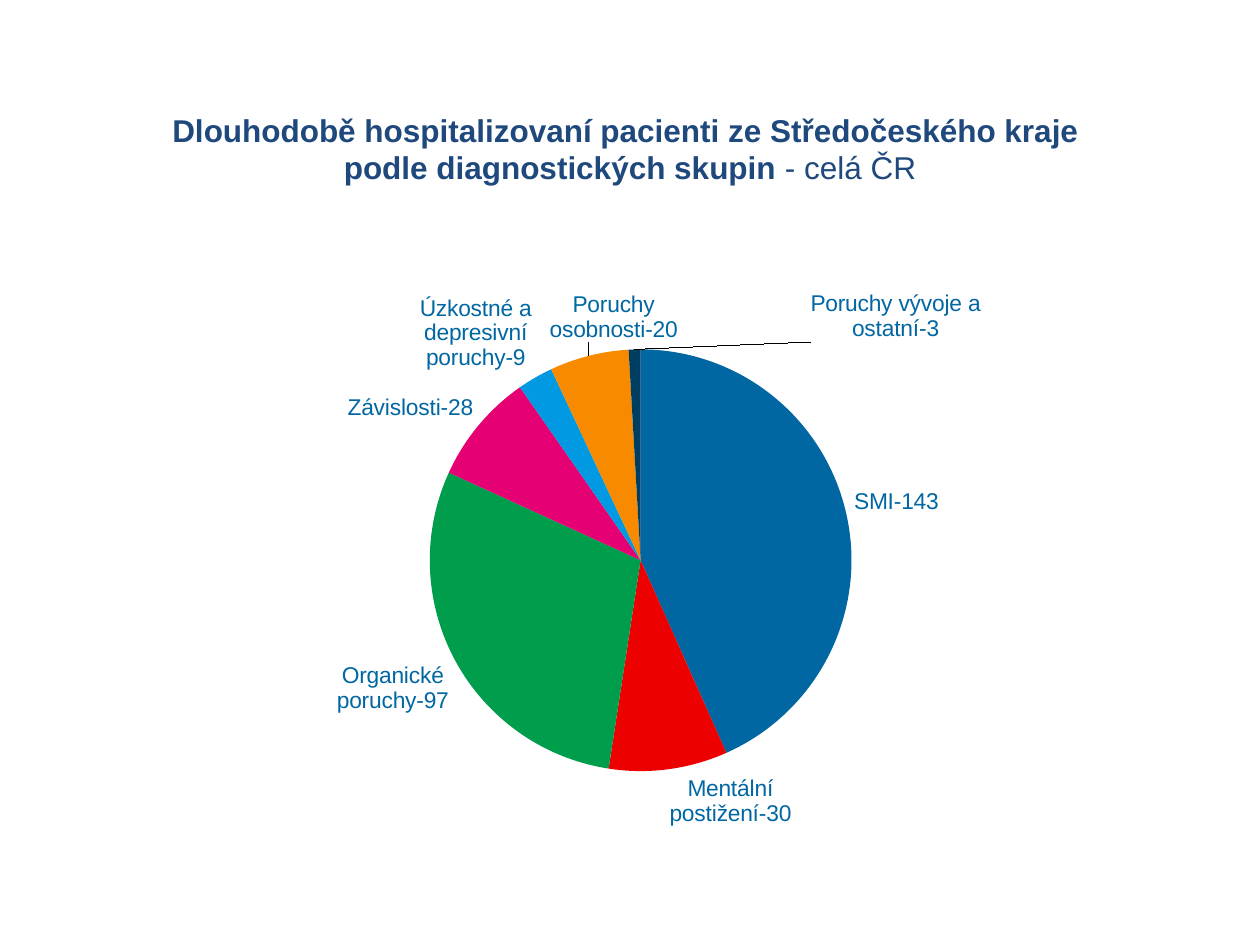
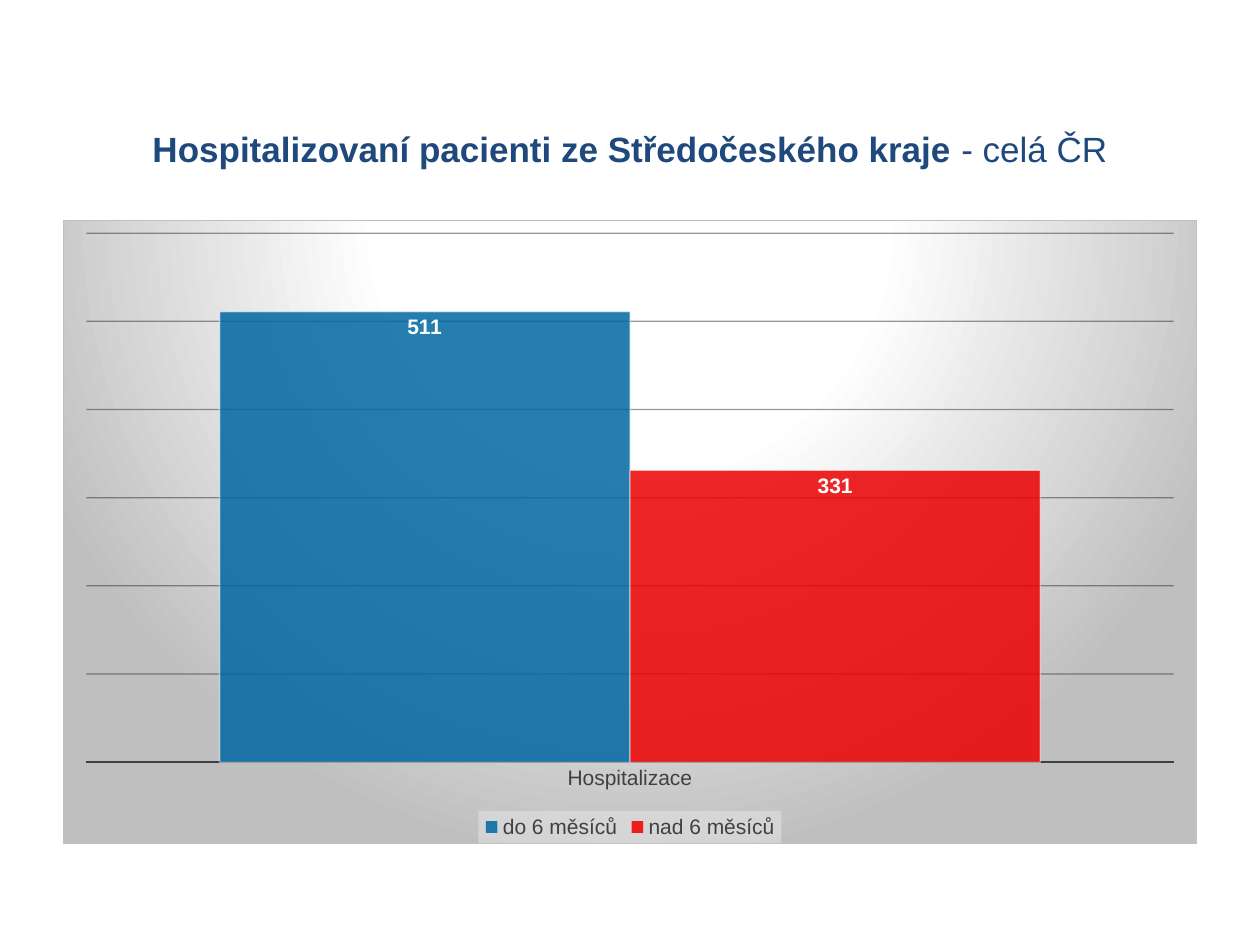
from copy import deepcopy

from pptx import Presentation
from pptx import oxml
from pptx import util as u
from pptx.chart.data import CategoryChartData
from pptx.dml.color import RGBColor
from pptx.enum import chart as kinds
from pptx.enum import text
from pptx.oxml import ns

WIDTH, HEIGHT = 10, 7.5
FONT = "Arial"
NAVY, BLUE, RED, WHITE = "1F497D", "0067A2", "EC0000", "FFFFFF"
GREY, DARK, BLACK = "BFBFBF", "404040", "000000"
TITLE_BOX = (0.05, 0.097, 0.9, 0.12)
PIE_BOX = (0.102, 0.283, 0.797, 0.62)
COLUMN_BOX = (0.05, 0.233, 0.9, 0.66)
DIAGNOSES = {
    "SMI": (143, BLUE),
    "Mentální postižení": (30, RED),
    "Organické poruchy": (97, "009D4D"),
    "Závislosti": (28, "E50073"),
    "Úzkostné a depresivní poruchy": (9, "0099E2"),
    "Poruchy osobnosti": (20, "F88A00"),
    "Poruchy vývoje a ostatní": (3, "003E61"),
}
LABEL_SHIFTS = {5: (0.09, -0.01), 6: (0.26, 0)}
STAYS = {"do 6 měsíců": (511, BLUE), "nad 6 měsíců": (331, RED)}


def colour(value):
    """Turn a hex string into a colour."""
    return RGBColor.from_string(value)


def place(box):
    """Turn shares of the slide into lengths."""
    return [u.Inches(share * side) for share, side in zip(box, (WIDTH, HEIGHT) * 2)]


def style_font(font, size, shade, bold=False):
    """Apply the shared typeface with a size and colour."""
    for name, value in {"name": FONT, "size": u.Pt(size), "bold": bold}.items():
        setattr(font, name, value)
    font.color.rgb = colour(shade)


def xml(tag, body):
    """Build a chart element from its tag and inner markup."""
    return oxml.parse_xml(f"<c:{tag} {ns.nsdecls('c', 'a')}>{body}</c:{tag}>")


def tint(value, alpha=100):
    """Give the markup of a colour with its opacity in percent."""
    return f'<a:srgbClr val="{value}"><a:alpha val="{alpha * 1000}"/></a:srgbClr>'


def gradient(stops, direction):
    """Give the markup of a gradient fill."""
    marks = "".join(f'<a:gs pos="{at * 1000}">{shade}</a:gs>' for at, shade in stops)
    return f"<a:gradFill><a:gsLst>{marks}</a:gsLst>{direction}</a:gradFill>"


def solid(value, alpha=100):
    """Give the markup of a plain fill."""
    return f"<a:solidFill>{tint(value, alpha)}</a:solidFill>"


def outline(fill):
    """Give the markup of a thin line."""
    return f'<a:ln w="9525">{fill}</a:ln>'


def manual_layout(**shares):
    """Build a manual layout from shares of the chart."""
    marks = "".join(f'<c:{name} val="{value}"/>' for name, value in shares.items())
    return xml("layout", f"<c:manualLayout>{marks}</c:manualLayout>")


def add_title(deck, strong, light, size):
    """Add a title-only page with a bold title and a light ending."""
    page = deck.slides.add_slide(deck.slide_layouts[5])
    title = page.shapes.title
    title.left, title.top, title.width, title.height = place(TITLE_BOX)
    frame = title.text_frame
    settings = {"word_wrap": True, "auto_size": text.MSO_AUTO_SIZE.NONE,
                "vertical_anchor": text.MSO_ANCHOR.MIDDLE}
    for name, value in settings.items():
        setattr(frame, name, value)
    para = frame.paragraphs[0]
    para.alignment = text.PP_ALIGN.CENTER
    para.text = strong
    for span in para.runs:
        style_font(span.font, size, NAVY, True)
    ending = para.add_run()
    ending.text = light
    style_font(ending.font, size, NAVY)
    return page


def add_chart(page, kind, box, categories, series):
    """Add a chart with the shared base font."""
    data = CategoryChartData()
    data.categories = categories
    for name, values in series.items():
        data.add_series(name, values)
    chart = page.shapes.add_chart(kind, *place(box), data).chart
    chart.has_title = False
    style_font(chart.font, 10, BLACK)
    return chart


def shift_label(labels, index, across, down):
    """Move one label away from its usual place."""
    label = xml("dLbl", f'<c:idx val="{index}"/>')
    label.append(manual_layout(x=across, y=down))
    skipped = {ns.qn("c:dLbl"), ns.qn("c:showLeaderLines")}
    label.extend(deepcopy(part) for part in labels if part.tag not in skipped)
    return label


def add_diagnosis_pie(page, box):
    """Draw the pie of diagnostic groups with outside labels."""
    values = [value for value, _ in DIAGNOSES.values()]
    chart = add_chart(page, kinds.XL_CHART_TYPE.PIE, box, list(DIAGNOSES), {"Pacienti": values})
    chart.has_legend = False
    plot = chart.plots[0]
    plot.vary_by_categories = True
    series = plot.series[0]
    for index, (_, shade) in enumerate(DIAGNOSES.values()):
        fill = series.points[index].format.fill
        fill.solid()
        fill.fore_color.rgb = colour(shade)
    labels = series.data_labels
    settings = {"show_value": True, "show_category_name": True, "show_percentage": False,
                "show_legend_key": False, "show_series_name": False,
                "position": kinds.XL_LABEL_POSITION.OUTSIDE_END}
    for name, value in settings.items():
        setattr(labels, name, value)
    style_font(labels.font, 13, BLUE)
    root = series._element.find(ns.qn("c:dLbls"))
    for tag in ("separator", "showLeaderLines"):
        for old in root.findall(ns.qn(f"c:{tag}")):
            root.remove(old)
    root.append(xml("separator", "-"))
    moved = [shift_label(root, index, *shift) for index, shift in LABEL_SHIFTS.items()]
    for label in reversed(moved):
        root.insert(0, label)
    root.append(oxml.parse_xml(f'<c:showLeaderLines {ns.nsdecls("c")} val="1"/>'))
    area = chart._chartSpace.find(".//" + ns.qn("c:plotArea"))
    for old in area.findall(ns.qn("c:layout")):
        area.remove(old)
    area.insert(0, manual_layout(layoutTarget="inner", xMode="edge", yMode="edge",
                                 x=0.3, y=0.14, w=0.42, h=0.72))


def style_column(series, shade):
    """Format one column series and its label."""
    look = series.format
    look.fill.solid()
    look.fill.fore_color.rgb = colour(shade)
    properties = series._element.find(ns.qn("c:spPr"))
    properties.getparent().replace(
        properties, xml("spPr", solid(shade, 85) + outline(solid(WHITE, 50))))
    labels = series.data_labels
    labels.show_value = True
    labels.position = kinds.XL_LABEL_POSITION.INSIDE_END
    style_font(labels.font, 12, WHITE, True)


def add_stay_columns(page, box):
    """Draw the columns of hospital stays on a gradient ground."""
    series = {name: [value] for name, (value, _) in STAYS.items()}
    chart = add_chart(page, kinds.XL_CHART_TYPE.COLUMN_CLUSTERED, box, ["Hospitalizace"], series)
    plot = chart.plots[0]
    for name, value in {"gap_width": 65, "overlap": 0, "vary_by_categories": False}.items():
        setattr(plot, name, value)
    for column, (_, shade) in zip(plot.series, STAYS.values()):
        style_column(column, shade)
    axis = chart.category_axis
    axis.major_tick_mark = kinds.XL_TICK_MARK.NONE
    style_font(axis.tick_labels.font, 12, DARK)
    axis.format.line.width = u.Pt(1.5)
    axis.format.line.color.rgb = colour(DARK)
    scale = chart.value_axis
    scale.visible = False
    for name, value in {"minimum_scale": 0, "maximum_scale": 600, "major_unit": 100,
                        "has_major_gridlines": True}.items():
        setattr(scale, name, value)
    fade = gradient([(0, tint("0D0D0D", 42)), (100, tint(GREY, 36))], '<a:lin ang="5400000"/>')
    grid = scale._element.find(ns.qn("c:majorGridlines"))
    grid.append(xml("spPr", outline(fade)))
    chart.has_legend = True
    legend = chart.legend
    legend.position = kinds.XL_LEGEND_POSITION.BOTTOM
    legend.include_in_layout = False
    style_font(legend.font, 12, DARK)
    legend._element.find(ns.qn("c:overlay")).addnext(xml("spPr", solid("F2F2F2", 39)))
    glow = gradient(
        [(0, tint(WHITE)), (39, tint(WHITE)), (100, tint(GREY))],
        '<a:path path="circle"><a:fillToRect l="50000" t="-80000" r="50000" b="180000"/></a:path>')
    ground = xml("spPr", glow + outline(solid(GREY)))
    chart._chartSpace.find(ns.qn("c:chart")).addnext(ground)


def main():
    """Build and save the deck."""
    deck = Presentation()
    deck.slide_width, deck.slide_height = u.Inches(WIDTH), u.Inches(HEIGHT)
    page = add_title(
        deck,
        "Dlouhodobě hospitalizovaní pacienti ze Středočeského kraje \vpodle diagnostických skupin ",
        "- celá ČR", 18)
    add_diagnosis_pie(page, PIE_BOX)
    page = add_title(deck, "Hospitalizovaní pacienti ze Středočeského kraje ", "- celá ČR", 20)
    add_stay_columns(page, COLUMN_BOX)
    deck.save("out.pptx")


if __name__ == "__main__":
    main()
